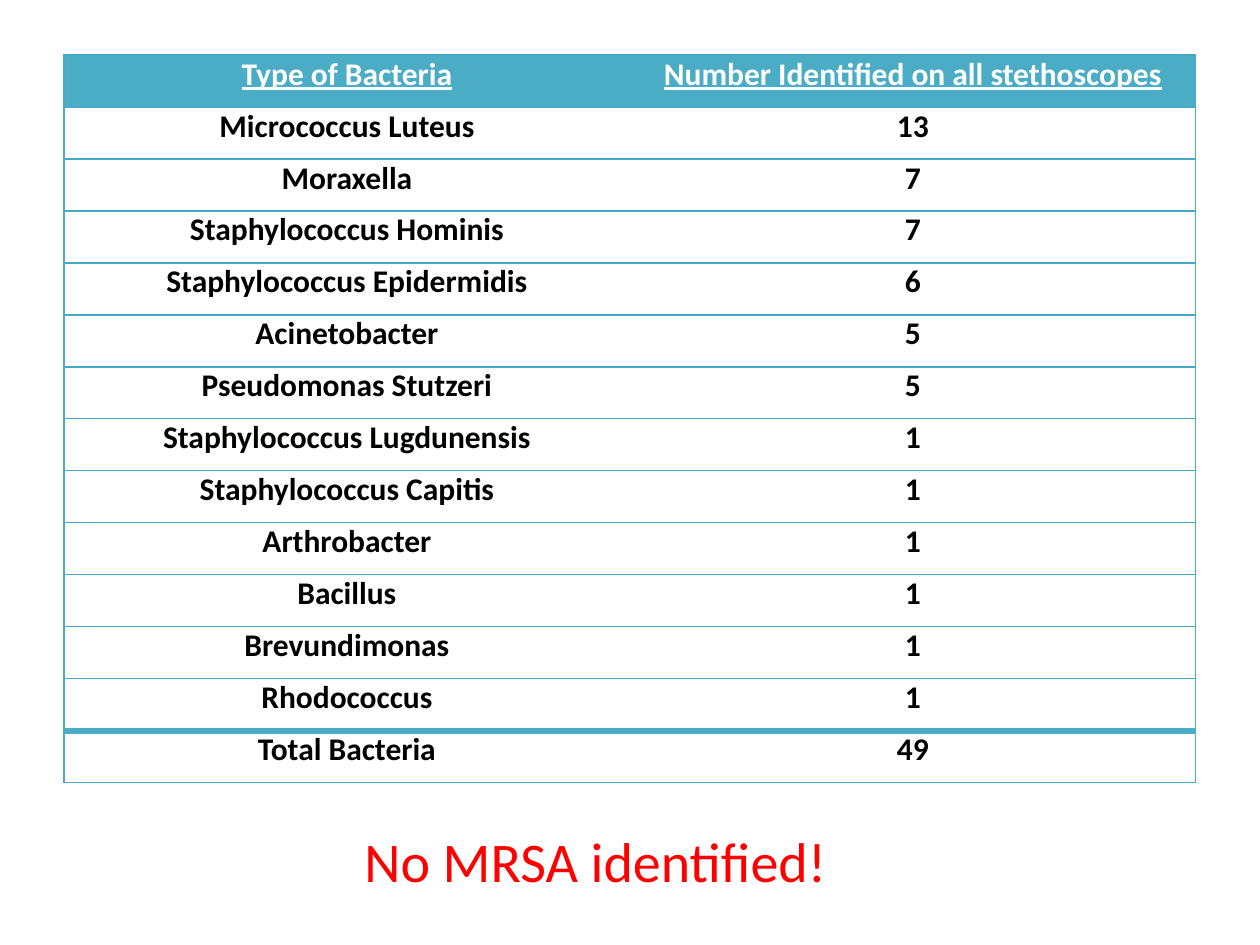
from dataclasses import dataclass

from lxml.etree import SubElement as Sub
from pptx import Presentation
from pptx.dml.color import RGBColor as RGB
from pptx.enum.text import MSO_ANCHOR as Anchor, PP_ALIGN as Align
from pptx.oxml.ns import qn
from pptx.util import Pt

PX = 914400 // 126  # EMU in one px
PLAIN = "{2D5ABB26-0587-4C30-8999-92F81FD0307C}"  # no style, no grid


@dataclass(frozen=True)
class Theme:
    font: str = "Calibri"
    head: str = "4BACC6"
    line: str = "46AAC5"
    white: str = "FFFFFF"
    ink: str = "000000"
    alert: str = "FF0000"
    cell: int = 18
    note: int = 32
    thin: float = 0.75
    thick: float = 4


THEME = Theme()

ROWS = [
    ("Type of Bacteria", "Number Identified on all stethoscopes"),
    ("Micrococcus Luteus", 13),
    ("Moraxella", 7),
    ("Staphylococcus Hominis", 7),
    ("Staphylococcus Epidermidis", 6),
    ("Acinetobacter", 5),
    ("Pseudomonas Stutzeri", 5),
    ("Staphylococcus Lugdunensis", 1),
    ("Staphylococcus Capitis", 1),
    ("Arthrobacter", 1),
    ("Bacillus", 1),
    ("Brevundimonas", 1),
    ("Rhodococcus", 1),
    ("Total Bacteria", 49),
]


def px(*vals):
    return [v * PX for v in vals]


def write(frame, text, size, color, bold=False, under=False):
    frame.text = str(text)
    para = frame.paragraphs[0]
    para.alignment = Align.CENTER
    font = para.runs[0].font
    font.name, font.size = THEME.font, Pt(size)
    font.bold, font.underline = bold, under
    font.color.rgb = RGB.from_string(color)


def edge(cell, side, width, color):
    """Draw one border of a cell; a width of 0 leaves it open."""
    line = Sub(cell._tc.get_or_add_tcPr(), qn(f"a:ln{side}"), w=str(Pt(width)))
    if width:
        fill = Sub(line, qn("a:solidFill"))
        Sub(fill, qn("a:srgbClr"), val=color)
    else:
        Sub(line, qn("a:noFill"))


def rule(pos):
    """Width and colour of the horizontal line above row pos."""
    if pos == len(ROWS) - 1:
        return THEME.thick, THEME.head
    return THEME.thin, THEME.line


def style(cell, row, col):
    cell.margin_left = cell.margin_right = 9 * PX
    cell.margin_top = cell.margin_bottom = 0
    cell.vertical_anchor = Anchor.TOP
    # Borders come before the fill in the cell's XML
    edge(cell, "L", THEME.thin if col == 0 else 0, THEME.line)
    edge(cell, "R", THEME.thin if col == 1 else 0, THEME.line)
    edge(cell, "T", *rule(row))
    edge(cell, "B", *rule(row + 1))
    cell.fill.solid()
    cell.fill.fore_color.rgb = RGB.from_string(THEME.white if row else THEME.head)


def add_grid(slide, left, top, wide, high):
    count = len(ROWS)
    table = slide.shapes.add_table(
        count, 2, *px(left, top, 2 * wide, count * high)).table
    table._tbl.tblPr.find(qn("a:tableStyleId")).text = PLAIN
    table.horz_banding = False
    for column in table.columns:
        column.width = wide * PX
    for r, values in enumerate(ROWS):
        table.rows[r].height = high * PX
        for c, value in enumerate(values):
            cell = table.cell(r, c)
            style(cell, r, c)
            write(cell.text_frame, value, THEME.cell,
                  THEME.ink if r else THEME.white, bold=True, under=r == 0)


def add_note(slide, text, *box):
    frame = slide.shapes.add_textbox(*px(*box)).text_frame
    frame.word_wrap = True
    write(frame, text, THEME.note, THEME.alert)


def main():
    deck = Presentation()
    deck.slide_width, deck.slide_height = px(1260, 945)
    slide = deck.slides.add_slide(deck.slide_layouts[6])
    # Counts per species
    add_grid(slide, 64, 55, 566, 52)
    # Finding below the table
    add_note(slide, "No MRSA identified!", 164, 820, 863, 81)
    deck.save("out.pptx")


if __name__ == "__main__":
    main()
